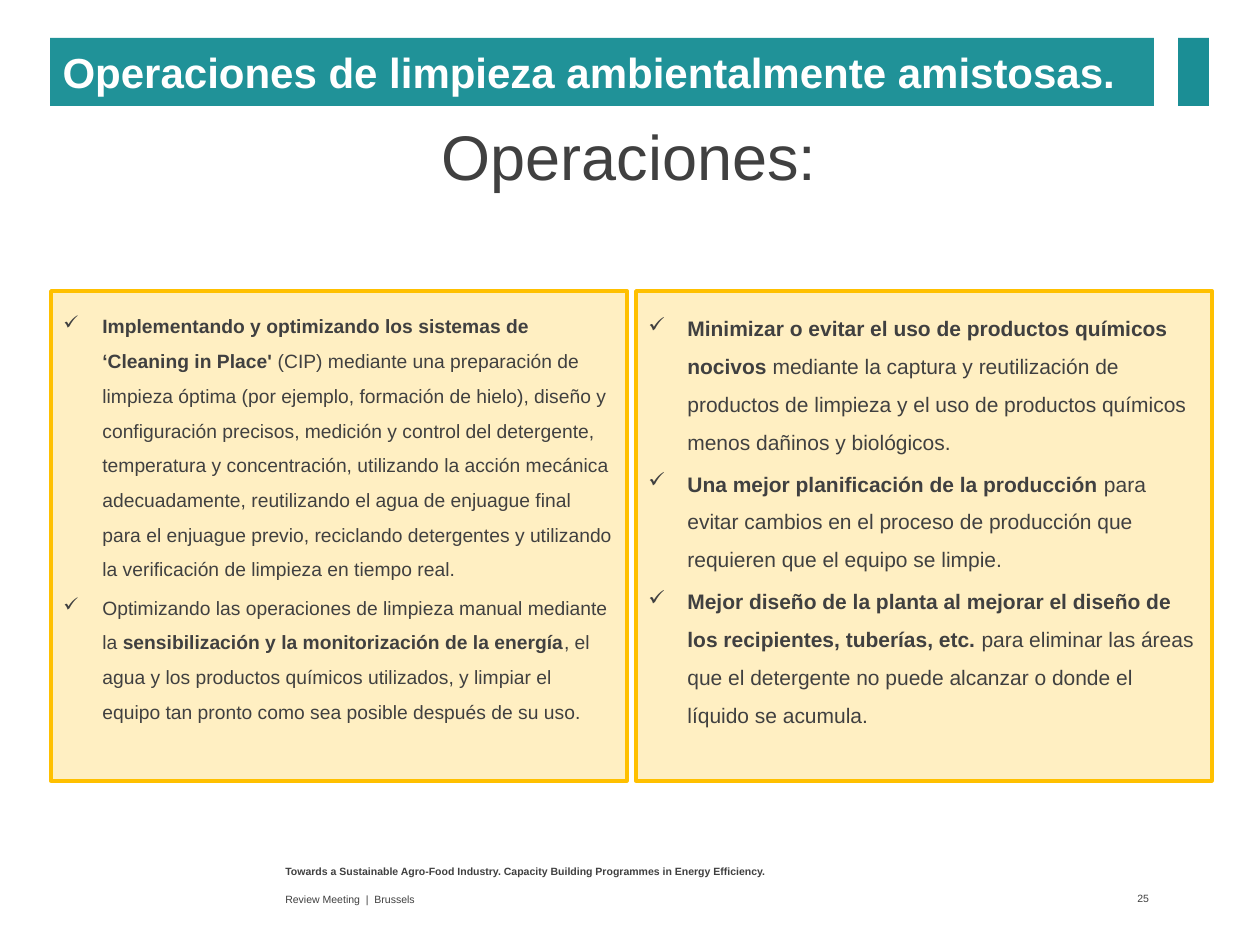
"""Build the slide on environmentally friendly cleaning operations."""
from lxml import etree
from pptx import Presentation
from pptx.dml.color import RGBColor
from pptx.enum.shapes import MSO_SHAPE as SHAPE
from pptx.enum.text import MSO_ANCHOR as ANCHOR, MSO_AUTO_SIZE as AUTOSIZE, PP_ALIGN as ALIGN
from pptx.oxml.ns import qn
from pptx.util import Emu, Pt

INK, TEAL, DARK_TEAL, AMBER, WHITE = "404040", "209298", "1B8E95", "FFC000", "FFFFFF"


def px(*lengths):
    return [Emu(round(length * 914400 / 126)) for length in lengths]


def write(frame, paragraphs, size, color=INK, bold=False, align=ALIGN.LEFT,
          anchor=ANCHOR.TOP, check=False):
    frame.word_wrap = True
    frame.auto_size = AUTOSIZE.NONE
    frame.vertical_anchor = anchor
    for index, runs in enumerate(paragraphs):
        paragraph = frame.add_paragraph() if index else frame.paragraphs[0]
        paragraph.alignment = align
        if check:
            paragraph.line_spacing = 1.5
            if index:
                paragraph.space_before = Pt(round(size * 0.2, 1))
            indent = px(39)[0]
            props = paragraph._p.get_or_add_pPr()
            props.set("marL", str(indent))
            props.set("indent", str(-indent))
            etree.SubElement(props, qn("a:buChar")).set("char", "✓")
        for text, strong in runs:
            run = paragraph.add_run()
            run.text = text
            run.font.name = "Arial"
            run.font.size = Pt(size)
            run.font.bold = bold or strong
            run.font.color.rgb = RGBColor.from_string(color)


prs = Presentation()
prs.slide_width, prs.slide_height = px(1260, 945)
slide = prs.slides.add_slide(prs.slide_layouts[5])
shapes = slide.shapes

title = shapes.title
title.left, title.top, title.width, title.height = px(50, 38, 1104, 68)
title.fill.solid()
title.fill.fore_color.rgb = RGBColor.from_string(TEAL)
write(title.text_frame, [[("Operaciones de limpieza ambientalmente amistosas.", True)]], 24,
      color=WHITE, anchor=ANCHOR.MIDDLE)

accent = shapes.add_shape(SHAPE.RECTANGLE, *px(1178, 38, 31, 68))
accent.shadow.inherit = False
accent.fill.solid()
accent.fill.fore_color.rgb = RGBColor.from_string(DARK_TEAL)
accent.line.fill.background()

subtitle = shapes.add_textbox(*px(50, 130, 1158, 50))
write(subtitle.text_frame, [[("Operaciones:", False)]], 36, align=ALIGN.CENTER,
      anchor=ANCHOR.MIDDLE)

cleaning = [
    [("Implementando y optimizando los sistemas de ‘Cleaning in Place' ", True),
     ("(CIP) mediante una preparación de limpieza óptima (por ejemplo, formación de hielo), "
      "diseño y configuración precisos, medición y control del detergente, temperatura y "
      "concentración, utilizando la acción mecánica adecuadamente, reutilizando el agua de "
      "enjuague final para el enjuague previo, reciclando detergentes y utilizando la "
      "verificación de limpieza en tiempo real.", False)],
    [("Optimizando las operaciones de limpieza manual mediante la ", False),
     ("sensibilización y la monitorización de la energía", True),
     (", el agua y los productos químicos utilizados, y limpiar el equipo tan pronto como "
      "sea posible después de su uso.", False)],
]
prevention = [
    [("Minimizar o evitar el uso de productos químicos nocivos ", True),
     ("mediante la captura y reutilización de productos de limpieza y el uso de productos "
      "químicos menos dañinos y biológicos.", False)],
    [("Una mejor planificación de la producción ", True),
     ("para evitar cambios en el proceso de producción que requieren que el equipo se "
      "limpie.", False)],
    [("Mejor diseño de la planta al mejorar el diseño de los recipientes, tuberías, etc. ", True),
     ("para eliminar las áreas que el detergente no puede alcanzar o donde el líquido se "
      "acumula.", False)],
]
for column, (practices, size) in enumerate([(cleaning, 11), (prevention, 12)]):
    left = 51 + 585 * column
    panel = shapes.add_shape(SHAPE.RECTANGLE, *px(left, 291, 576, 490))
    panel.shadow.inherit = False
    panel.fill.solid()
    panel.fill.fore_color.rgb = RGBColor.from_string(AMBER)
    tint = panel.fill._xPr.find(qn("a:solidFill"))[0]
    etree.SubElement(tint, qn("a:alpha")).set("val", "24000")
    panel.line.color.rgb = RGBColor.from_string(AMBER)
    panel.line.width = Pt(2)
    practice_list = shapes.add_textbox(*px(left, 297, 576, 436))
    write(practice_list.text_frame, practices, size, check=True)

programme = shapes.add_textbox(*px(273, 859, 693, 26))
write(programme.text_frame, [[("Towards a Sustainable Agro-Food Industry. Capacity Building "
                               "Programmes in Energy Efficiency.", True)]], 6)
meeting = shapes.add_textbox(*px(273, 887, 693, 24))
write(meeting.text_frame, [[("Review Meeting  |  Brussels", False)]], 6, anchor=ANCHOR.MIDDLE)
page_number = shapes.add_textbox(*px(1084, 886, 70, 25))
page_number.text_frame.margin_right = px(5)[0]
write(page_number.text_frame, [[("25", False)]], 6, align=ALIGN.RIGHT, anchor=ANCHOR.MIDDLE)

prs.save("out.pptx")
